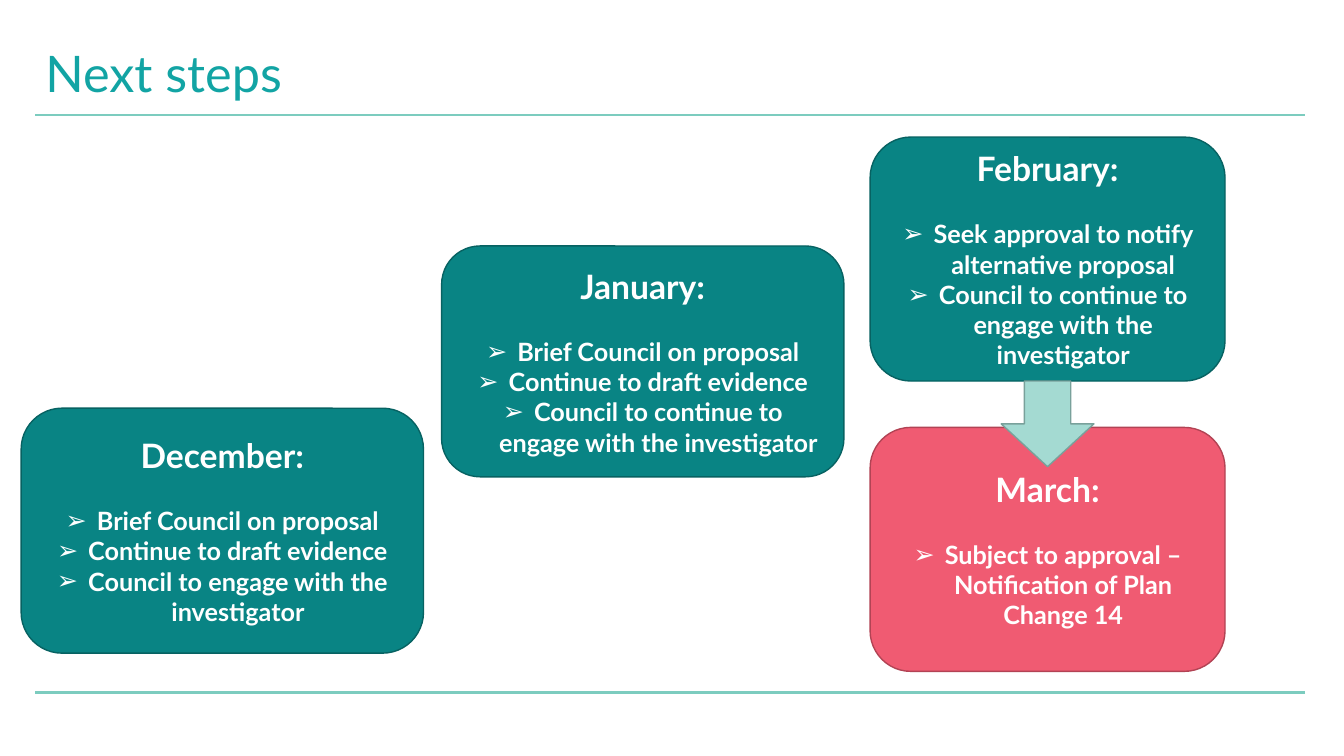
from lxml import etree
from pptx import Presentation
from pptx import util as u
from pptx.dml.color import RGBColor
from pptx.enum import shapes, text
from pptx.oxml.ns import qn

PX = 9144
WIDTH, HEIGHT = 1333, 750
FONT = "Lato"
WHITE, TEAL, TEAL_EDGE = "FFFFFF", "098484", "076262"
PINK, PINK_EDGE = "F05B72", "B24354"
MINT, MINT_EDGE = "A4DAD2", "79A19B"
TITLE_COLOUR, RULE_COLOUR = "12A4A4", "7CCCBF"
INDENT = 31

BRIEF = "Brief Council on proposal"
DRAFT = "Continue to draft evidence"
CONTINUE = "Council to continue to engage with the investigator"
STEPS = [
    ("December:", [BRIEF, DRAFT, "Council to engage with the investigator"],
     (21, 405, 399, 243), TEAL, TEAL_EDGE),
    ("January:", [BRIEF, DRAFT, CONTINUE],
     (438, 244, 399, 229), TEAL, TEAL_EDGE),
    ("February:", ["Seek approval to notify alternative proposal", CONTINUE],
     (863, 136, 352, 242), TEAL, TEAL_EDGE),
    ("March:", ["Subject to approval – Notification of Plan Change 14"],
     (863, 424, 352, 242), PINK, PINK_EDGE),
]


def px(length):
    return u.Emu(length * PX)


def colour(value):
    return RGBColor.from_string(value)


def set_font(font, size, value, bold=False):
    font.name = FONT
    font.size = u.Pt(size)
    font.bold = bold
    font.color.rgb = colour(value)


def add_rule(page, left, top, width):
    rule = page.shapes.add_connector(
        shapes.MSO_CONNECTOR.STRAIGHT, px(left), px(top), px(left + width), px(top))
    rule.line.color.rgb = colour(RULE_COLOUR)
    rule.line.width = u.Pt(1.5)
    etree.SubElement(rule._element.spPr, qn("a:effectLst"))


def add_title(page, wording, box):
    title = page.shapes.title
    title.left, title.top, title.width, title.height = map(px, box)
    frame = title.text_frame
    frame.text = wording
    frame.vertical_anchor = text.MSO_ANCHOR.MIDDLE
    para = frame.paragraphs[0]
    para.alignment = text.PP_ALIGN.LEFT
    para.line_spacing = 0.9
    set_font(para.runs[0].font, 36, TITLE_COLOUR)


def add_block(page, kind, box, fill, edge):
    block = page.shapes.add_shape(kind, *map(px, box))
    block.shadow.inherit = False
    block.fill.solid()
    block.fill.fore_color.rgb = colour(fill)
    block.line.color.rgb = colour(edge)
    block.line.width = u.Pt(1)
    return block


def add_bullet(para):
    properties = para._p.get_or_add_pPr()
    properties.set("marL", str(px(INDENT)))
    properties.set("indent", str(-px(INDENT)))
    etree.SubElement(properties, qn("a:buFont"), typeface="Arial")
    etree.SubElement(properties, qn("a:buChar"), char="➢")


def add_step(page, month, tasks, box, fill, edge):
    card = add_block(page, shapes.MSO_SHAPE.ROUNDED_RECTANGLE, box, fill, edge)
    frame = card.text_frame
    frame.word_wrap = True
    frame.vertical_anchor = text.MSO_ANCHOR.MIDDLE
    heading = frame.paragraphs[0]
    heading.text = month
    heading.alignment = text.PP_ALIGN.CENTER
    heading.space_after = u.Pt(21.6)
    set_font(heading.runs[0].font, 24, WHITE, True)
    for task in tasks:
        para = frame.add_paragraph()
        para.text = task
        para.alignment = text.PP_ALIGN.CENTER
        add_bullet(para)
        set_font(para.runs[0].font, 18, WHITE, True)


def add_next_steps(deck):
    page = deck.slides.add_slide(deck.slide_layouts[5])
    for top in (114, 687):
        add_rule(page, 35, top, 1259)
    add_title(page, "Next steps", (35, 40, 1260, 72))
    for step in STEPS:
        add_step(page, *step)
    add_block(page, shapes.MSO_SHAPE.DOWN_ARROW, (993, 378, 92, 85), MINT, MINT_EDGE)


def main():
    deck = Presentation()
    deck.slide_width, deck.slide_height = px(WIDTH), px(HEIGHT)
    add_next_steps(deck)
    deck.save("out.pptx")


if __name__ == "__main__":
    main()
